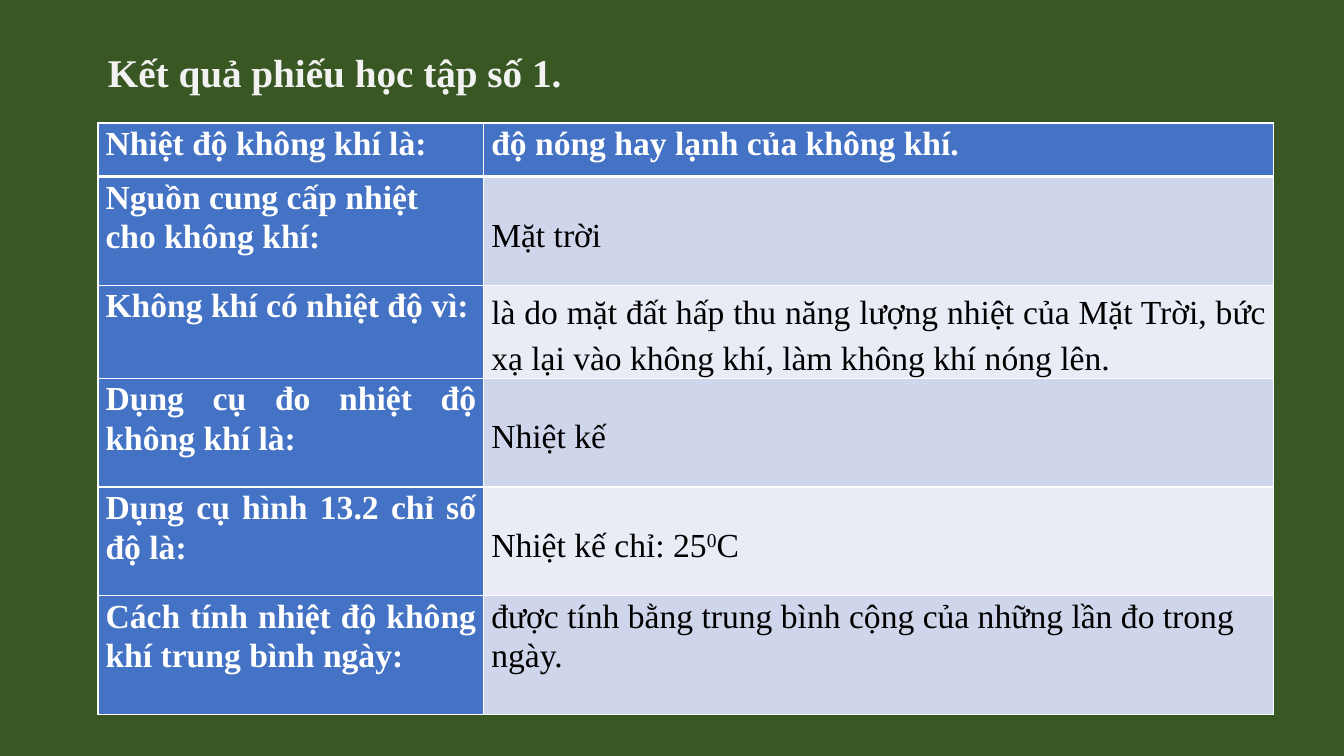
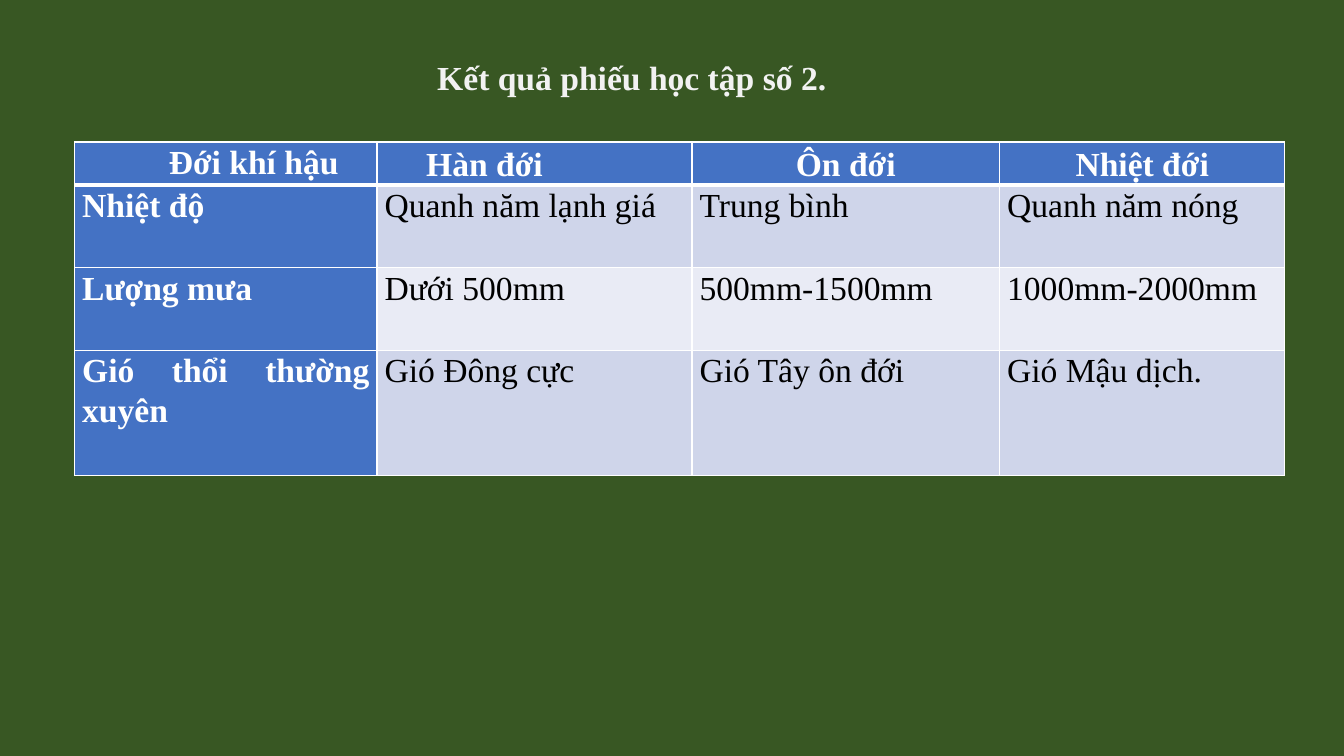
from lxml.etree import SubElement
from pptx import Presentation
from pptx.dml.color import RGBColor
from pptx.enum.text import MSO_ANCHOR, PP_ALIGN
from pptx.oxml.ns import qn
from pptx.util import Cm, Pt


def color(value):
    return RGBColor.from_string(value)


class Deck:
    FONT = "Times New Roman"
    BACKGROUND = "385723"
    TITLE = "F2F2F2"
    HEADER = "4472C4"
    BANDS = ("CFD5EA", "E9EBF5")
    WHITE = "FFFFFF"
    BLACK = "000000"
    TABLE_SIZE = 24

    def __init__(self):
        self.presentation = Presentation()
        self.presentation.slide_width = Cm(33.87)
        self.presentation.slide_height = Cm(19.05)
        self.slide = None

    def add_slide(self):
        self.slide = self.presentation.slides.add_slide(self.presentation.slide_layouts[6])
        fill = self.slide.background.fill
        fill.solid()
        fill.fore_color.rgb = color(self.BACKGROUND)

    def style_font(self, paragraph, size, text_color, bold):
        font = paragraph.font
        font.name = self.FONT
        font.size = Pt(size)
        font.bold = bold
        font.color.rgb = color(text_color)

    def add_title(self, text, left, top, width, height, size):
        box = self.slide.shapes.add_textbox(Cm(left), Cm(top), Cm(width), Cm(height))
        box.text_frame.word_wrap = True
        paragraph = box.text_frame.paragraphs[0]
        paragraph.text = text
        self.style_font(paragraph, size, self.TITLE, True)

    def add_border(self, cell, side, width):
        properties = cell._tc.get_or_add_tcPr()
        line = SubElement(properties, qn(f"a:ln{side}"), w=str(Pt(width)))
        fill = SubElement(line, qn("a:solidFill"))
        SubElement(fill, qn("a:srgbClr"), val=self.WHITE)

    def fill_cell(self, cell, text, row, column):
        is_header = row == 0 or column == 0
        widths = {"L": 1, "R": 1, "T": 3 if row == 1 else 1, "B": 3 if row == 0 else 1}
        for side, width in widths.items():
            self.add_border(cell, side, width)
        cell.fill.solid()
        cell.fill.fore_color.rgb = color(self.HEADER if is_header else self.BANDS[(row - 1) % 2])
        cell.margin_left = cell.margin_right = Cm(0.19)
        cell.margin_top = cell.margin_bottom = 0
        paragraph = cell.text_frame.paragraphs[0]
        paragraph.line_spacing = 1.07
        paragraph.alignment = PP_ALIGN.LEFT if column else PP_ALIGN.JUSTIFY
        self.style_font(paragraph, self.TABLE_SIZE, self.WHITE if is_header else self.BLACK, is_header)
        for index, part in enumerate(text.split("^")):
            run = paragraph.add_run()
            run.text = part
            if index % 2:
                run._r.get_or_add_rPr().set("baseline", "30000")

    def add_table(self, rows, left, top, widths, heights):
        table = self.slide.shapes.add_table(
            len(rows), len(widths), Cm(left), Cm(top), Cm(sum(widths)), Cm(sum(heights))
        ).table
        table.horz_banding = False
        for table_column, width in zip(table.columns, widths):
            table_column.width = Cm(width)
        for table_row, height in zip(table.rows, heights):
            table_row.height = Cm(height)
        for row, texts in enumerate(rows):
            for column, text in enumerate(texts):
                self.fill_cell(table.cell(row, column), text, row, column)
        return table


def build_temperature_slide(deck):
    deck.add_slide()
    rows = [
        ("Nhiệt độ không khí là:", "độ nóng hay lạnh của không khí."),
        ("Nguồn cung cấp nhiệt cho không khí:", "Mặt trời"),
        (
            "Không khí có nhiệt độ vì:",
            "là do mặt đất hấp thu năng lượng nhiệt của Mặt Trời, bức xạ lại vào không khí, làm không khí nóng lên.",
        ),
        ("Dụng cụ đo nhiệt độ không khí là:", "Nhiệt kế"),
        ("Dụng cụ hình 13.2 chỉ số độ là:", "Nhiệt kế chỉ: 25^0^C"),
        (
            "Cách tính nhiệt độ không khí trung bình ngày:",
            "được tính bằng trung bình cộng của những lần đo trong ngày.",
        ),
    ]
    table = deck.add_table(rows, 2.47, 3.1, (9.72, 19.91), (1.35, 2.74, 2.34, 2.74, 2.74, 3))
    table.cell(1, 0).text_frame.paragraphs[0].alignment = PP_ALIGN.LEFT
    for row in (1, 3, 4):
        table.cell(row, 1).margin_top = Cm(0.96)
    reason = table.cell(2, 1).text_frame.paragraphs[0]
    reason.alignment = PP_ALIGN.JUSTIFY
    reason.line_spacing = 1.25
    deck.add_title("Kết quả phiếu học tập số 1.", 2.47, 1.1, 14, 1.45, 28)


def build_climate_slide(deck):
    deck.add_slide()
    rows = [
        ("Đới khí hậu", "Hàn đới", "Ôn đới", "Nhiệt đới"),
        ("Nhiệt độ", "Quanh năm lạnh giá", "Trung bình", "Quanh năm nóng"),
        ("Lượng mưa", "Dưới 500mm", "500mm-1500mm", "1000mm-2000mm"),
        ("Gió thổi thường xuyên", "Gió Đông cực", "Gió Tây ôn đới", "Gió Mậu dịch."),
    ]
    table = deck.add_table(rows, 1.88, 3.58, (7.62, 7.94, 7.75, 7.19), (0.99, 2.08, 2.08, 3.15))
    for column in (0, 2, 3):
        table.cell(0, column).text_frame.paragraphs[0].alignment = PP_ALIGN.CENTER
    for column in (1, 2, 3):
        table.cell(0, column).vertical_anchor = MSO_ANCHOR.MIDDLE
    table.cell(0, 0).margin_left = Cm(1.6)
    table.cell(0, 1).margin_left = Cm(1.24)
    deck.add_title("Kết quả phiếu học tập số 2.", 10.77, 1.32, 12.34, 1.25, 24)


def main():
    deck = Deck()
    build_temperature_slide(deck)
    build_climate_slide(deck)
    deck.presentation.save("out.pptx")


if __name__ == "__main__":
    main()
